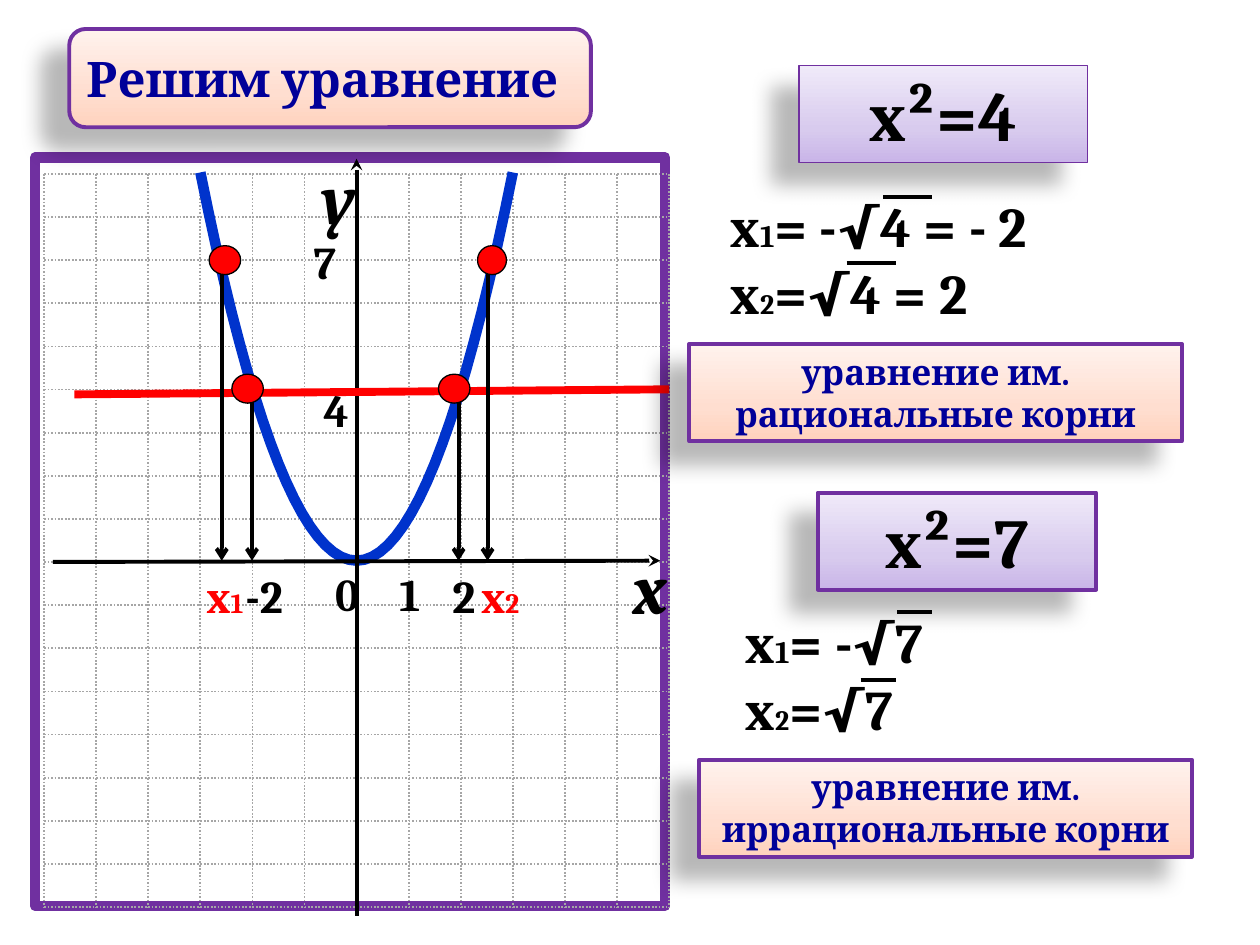
from typing import NamedTuple, Optional

from lxml import etree
from pptx import Presentation
from pptx.dml.color import RGBColor
from pptx.enum.dml import MSO_LINE
from pptx.enum.shapes import MSO_CONNECTOR, MSO_SHAPE
from pptx.enum.text import MSO_ANCHOR, PP_ALIGN
from pptx.oxml import parse_xml
from pptx.oxml.ns import qn
from pptx.util import Inches, Pt

RECT, ROUNDED = MSO_SHAPE.RECTANGLE, MSO_SHAPE.ROUNDED_RECTANGLE
DOT = MSO_SHAPE.FLOWCHART_CONNECTOR
STRAIGHT = MSO_CONNECTOR.STRAIGHT
DOTTED = MSO_LINE.ROUND_DOT
MIDDLE, TOP = MSO_ANCHOR.MIDDLE, MSO_ANCHOR.TOP
LEFT, CENTER = PP_ALIGN.LEFT, PP_ALIGN.CENTER

BLACK = RGBColor(0x00, 0x00, 0x00)
WHITE = RGBColor(0xFF, 0xFF, 0xFF)
RED = RGBColor(0xFF, 0x00, 0x00)
PURPLE = RGBColor(0x70, 0x30, 0xA0)
GRAY = RGBColor(0xA6, 0xA6, 0xA6)
BLUE = RGBColor(0x00, 0x33, 0xCC)
NAVY = RGBColor(0x00, 0x00, 0x99)
LILAC = (RGBColor(0xC9, 0xB5, 0xE8), RGBColor(0xD8, 0xCB, 0xEE), RGBColor(0xF0, 0xEA, 0xF9))
PEACH = (RGBColor(0xFF, 0xD2, 0xBD), RGBColor(0xFF, 0xDE, 0xD0), RGBColor(0xFF, 0xF2, 0xED))

FONT = "Cambria"
DRAWING = "http://schemas.openxmlformats.org/drawingml/2006/main"

# Grid and coordinate system, in inches
GRID_LEFT, GRID_TOP, GRID_RIGHT, GRID_BOTTOM = 0.35, 1.38, 5.31, 7.2
COLUMNS, ROWS = 12, 17
UNIT_X = (GRID_RIGHT - GRID_LEFT) / COLUMNS
UNIT_Y = (GRID_BOTTOM - GRID_TOP) / ROWS
ORIGIN_X, ORIGIN_Y = 2.83, 4.45


class Span(NamedTuple):
    text: str
    size: float


class Label(NamedTuple):
    left: float
    top: float
    width: float
    height: float
    spans: list[Span]
    color: RGBColor = BLACK
    italic: bool = False


class Card(NamedTuple):
    left: float
    top: float
    width: float
    height: float
    text: str
    size: float
    color: RGBColor
    shades: tuple[RGBColor, RGBColor, RGBColor]
    border: float = 2.25
    preset: int = RECT
    align: int = CENTER


class Stroke(NamedTuple):
    x1: float
    y1: float
    x2: float
    y2: float
    width: float = 2.25
    color: RGBColor = BLACK
    head: Optional[str] = None
    dash: Optional[int] = None


LABELS = [
    Label(2.55, 4.43, 0.48, 0.55, [Span("0", 26)]),
    Label(4.92, 4.26, 0.55, 0.78, [Span("x", 40)], italic=True),
    Label(2.44, 1.17, 0.6, 0.78, [Span("y", 40)], italic=True),
    Label(3.06, 4.43, 0.4, 0.55, [Span("1", 26)]),
    Label(2.46, 2.97, 0.46, 0.55, [Span("4", 26)]),
    Label(2.38, 1.8, 0.43, 0.55, [Span("7", 26)]),
    Label(3.48, 4.45, 0.45, 0.55, [Span("2", 26)]),
    Label(1.84, 4.45, 0.59, 0.55, [Span("-2", 26)]),
    Label(1.53, 4.45, 0.55, 0.55, [Span("x", 26), Span("1", 16)], RED),
    Label(3.71, 4.45, 0.58, 0.55, [Span("x", 26), Span("2", 16)], RED),
]
AXES = [
    Stroke(0.42, 4.46, 5.24, 4.45, head="stealth"),
    Stroke(2.83, 7.27, 2.83, 1.26, head="stealth"),
]
LEVEL_LINE = Stroke(0.59, 3.13, 5.31, 3.09, 4.5, RED)
DROPS = [(2.0, 3.13), (3.64, 3.13), (1.76, 2.11), (3.87, 2.11)]
DOTS = [(1.66, 1.95, 0.25), (3.79, 1.95, 0.23), (1.84, 2.97, 0.25), (3.48, 2.97, 0.25)]
ROOTS = [
    (5.7, 1.47, 3.91, "= -√4 = - 2", "=√4 = 2"),
    (5.82, 4.77, 2.8, "= -√7", "=√7"),
]
ROOT_BARS = [(7.01, 1.56, 0.39), (6.72, 2.09, 0.39), (7.12, 4.86, 0.28), (6.83, 5.4, 0.28)]
CARDS = [
    Card(6.34, 0.52, 2.29, 0.77, "x²=4", 40, BLACK, LILAC, border=0.75),
    Card(6.49, 3.91, 2.21, 0.77, "x²=7", 40, BLACK, LILAC),
    Card(5.47, 2.73, 3.91, 0.77, "уравнение им. рациональные корни", 20, NAVY, PEACH),
    Card(5.55, 6.03, 3.91, 0.77, "уравнение им. иррациональные корни", 20, NAVY, PEACH),
    Card(0.55, 0.23, 4.14, 0.78, "Решим уравнение", 28, NAVY, PEACH, preset=ROUNDED, align=LEFT),
]


def style_font(font, color: RGBColor, italic: bool = False) -> None:
    font.name, font.bold, font.italic = FONT, True, italic
    font.color.rgb = color


def add_spans(para, spans: list[Span], color: RGBColor, italic: bool = False) -> None:
    style_font(para.font, color, italic)
    for item in spans:
        span = para.add_run()
        span.text, span.font.size = item.text, Pt(item.size)


def add_stroke(shapes, stroke: Stroke) -> None:
    ends = [Inches(value) for value in stroke[:4]]
    line = shapes.add_connector(STRAIGHT, *ends)
    line.line.width, line.line.color.rgb = Pt(stroke.width), stroke.color
    if stroke.dash:
        line.line.dash_style = stroke.dash
    properties = line._element.spPr
    if stroke.head:
        etree.SubElement(properties.find(qn("a:ln")), qn("a:tailEnd"), type=stroke.head)
    etree.SubElement(properties, qn("a:effectLst"))


def add_solid(shapes, preset: int, left: float, top: float, width: float, height: float,
              fill: RGBColor, line: RGBColor, border: float) -> None:
    shape = shapes.add_shape(preset, Inches(left), Inches(top), Inches(width), Inches(height))
    shape.shadow.inherit = False
    shape.fill.solid()
    shape.fill.fore_color.rgb = fill
    shape.line.color.rgb, shape.line.width = line, Pt(border)


def add_parabola(shapes) -> None:
    steps = 20
    units = [3 * step / steps for step in range(-steps, steps + 1)]
    points = [(Inches(ORIGIN_X + u * UNIT_X), Inches(ORIGIN_Y - u * u * UNIT_Y)) for u in units]
    builder = shapes.build_freeform(*points[0])
    builder.add_line_segments(points[1:], close=False)
    curve = builder.convert_to_shape()
    curve.shadow.inherit = False
    curve.fill.background()
    curve.line.color.rgb, curve.line.width = BLUE, Pt(6)


def add_label(shapes, label: Label) -> None:
    box = shapes.add_textbox(*[Inches(value) for value in label[:4]])
    frame = box.text_frame
    frame.word_wrap = False
    frame.margin_left = frame.margin_right = Inches(0.11)
    frame.margin_top = frame.margin_bottom = Inches(0.06)
    add_spans(frame.paragraphs[0], label.spans, label.color, label.italic)


def add_roots(shapes, left: float, top: float, width: float, first: str, second: str) -> None:
    box = shapes.add_textbox(Inches(left), Inches(top), Inches(width), Inches(1.18))
    frame = box.text_frame
    frame.word_wrap = True
    add_spans(frame.paragraphs[0], [Span("x", 32), Span("1", 18), Span(first, 32)], BLACK)
    add_spans(frame.add_paragraph(), [Span("x", 32), Span("2", 16), Span(second, 32)], BLACK)


def add_card(shapes, card: Card) -> None:
    shape = shapes.add_shape(card.preset, *[Inches(value) for value in card[:4]])
    shape.line.color.rgb, shape.line.width = PURPLE, Pt(card.border)
    # Gradient running upwards, and a soft shadow to the lower left
    stops = "".join(f'<a:gs pos="{place}"><a:srgbClr val="{shade}"/></a:gs>'
                    for place, shade in zip((0, 35000, 100000), card.shades))
    properties = shape._element.spPr
    properties.insert(2, parse_xml(
        f'<a:gradFill xmlns:a="{DRAWING}" rotWithShape="1"><a:gsLst>{stops}</a:gsLst>'
        '<a:lin ang="16200000" scaled="1"/></a:gradFill>'))
    properties.append(parse_xml(
        f'<a:effectLst xmlns:a="{DRAWING}"><a:outerShdw blurRad="{Pt(11.8)}" dist="{Pt(19.7)}" '
        'dir="8460000" rotWithShape="0"><a:srgbClr val="000000"><a:alpha val="28000"/>'
        '</a:srgbClr></a:outerShdw></a:effectLst>'))
    frame = shape.text_frame
    frame.word_wrap = True
    frame.vertical_anchor = MIDDLE if card.preset == ROUNDED else TOP
    para = frame.paragraphs[0]
    para.alignment = card.align
    add_spans(para, [Span(card.text, card.size)], card.color)


def main() -> None:
    deck = Presentation()
    deck.slide_width, deck.slide_height = Inches(10), Inches(7.5)
    shapes = deck.slides.add_slide(deck.slide_layouts[6]).shapes

    # Framed grid
    add_solid(shapes, RECT, 0.28, 1.25, 5, 5.94, WHITE, PURPLE, 6)
    for column in range(COLUMNS + 1):
        x = GRID_LEFT + column * UNIT_X
        add_stroke(shapes, Stroke(x, GRID_TOP, x, GRID_BOTTOM, 1, GRAY, dash=DOTTED))
    for row in range(ROWS + 1):
        y = GRID_TOP + row * UNIT_Y
        add_stroke(shapes, Stroke(GRID_LEFT, y, GRID_RIGHT, y, 1, GRAY, dash=DOTTED))

    # Graph with its level line, drops to the x axis and intersections
    add_parabola(shapes)
    for axis in AXES:
        add_stroke(shapes, axis)
    for label in LABELS:
        add_label(shapes, label)
    add_stroke(shapes, LEVEL_LINE)
    for x, y in DROPS:
        add_stroke(shapes, Stroke(x, y, x, ORIGIN_Y, head="arrow"))
    for left, top, width in DOTS:
        add_solid(shapes, DOT, left, top, width, 0.23, RED, BLACK, 0.75)

    # Equations, roots and conclusions
    for card in CARDS:
        add_card(shapes, card)
    for roots in ROOTS:
        add_roots(shapes, *roots)
    for left, top, width in ROOT_BARS:
        add_stroke(shapes, Stroke(left, top, left + width, top))

    deck.save("out.pptx")


if __name__ == "__main__":
    main()
